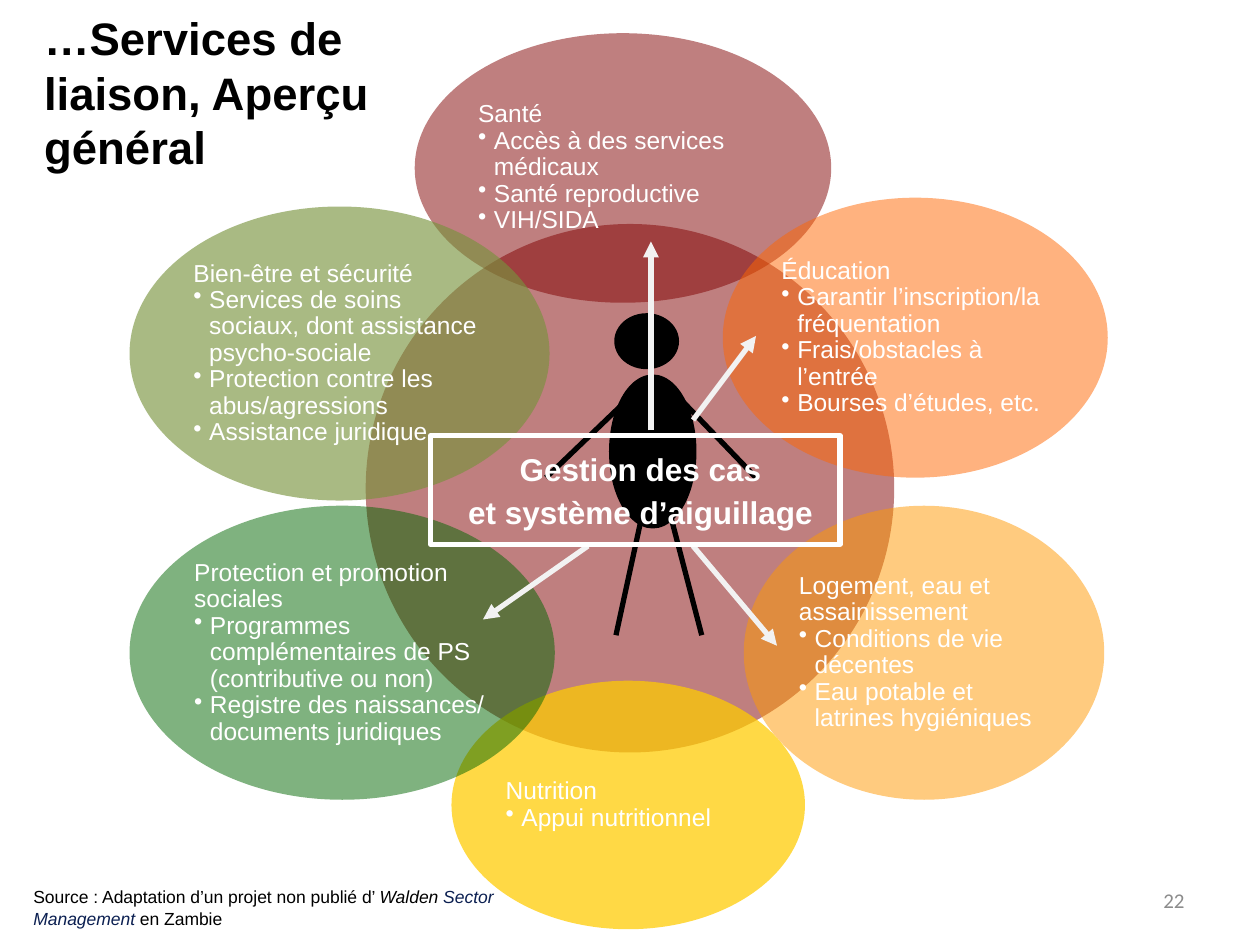
from lxml import etree
from pptx import Presentation
from pptx.dml.color import RGBColor
from pptx.enum.shapes import MSO_CONNECTOR, MSO_SHAPE
from pptx.enum.text import MSO_ANCHOR, MSO_AUTO_SIZE, PP_ALIGN
from pptx.oxml.ns import qn
from pptx.util import Pt

OVAL, RECT = MSO_SHAPE.OVAL, MSO_SHAPE.RECTANGLE
STRAIGHT = MSO_CONNECTOR.STRAIGHT
TOP, MIDDLE = MSO_ANCHOR.TOP, MSO_ANCHOR.MIDDLE
FIXED = MSO_AUTO_SIZE.NONE
LEFT, CENTER, RIGHT = PP_ALIGN.LEFT, PP_ALIGN.CENTER, PP_ALIGN.RIGHT

INSET = (1 - 0.5 ** 0.5) / 2  # margin of the rectangle inscribed in an oval
HANG = 9  # bullet indent

# box, colour, opacity in percent, heading, bullets
PETALS = [
    ((237, 19, 238, 154), "800000", 50, "Santé",
     ["Accès à des services médicaux", "Santé reproductive", "VIH/SIDA"]),
    ((413, 113, 220, 160), "FF6600", 50, "Éducation",
     ["Garantir l’inscription/la fréquentation", "Frais/obstacles à l’entrée",
      "Bourses d’études, etc."]),
    ((425, 289, 206, 168), "FF9900", 50, "Logement, eau et assainissement",
     ["Conditions de vie décentes", "Eau potable et latrines hygiéniques"]),
    ((258, 389, 202, 142), "FFCC00", 73, "Nutrition", ["Appui nutritionnel"]),
    ((74, 289, 243, 168), "006600", 50, "Protection et promotion sociales",
     ["Programmes complémentaires de PS (contributive ou non)",
      "Registre des naissances/ documents juridiques"]),
    ((74, 118, 240, 168), "77933C", 63, "Bien-être et sécurité",
     ["Services de soins sociaux, dont assistance psycho-sociale",
      "Protection contre les abus/agressions", "Assistance juridique"]),
]
LIMBS = [((50, 45), (0, 93)), ((120, 93), (71, 42)),
         ((55, 114), (40, 183)), ((71, 114), (89, 183))]
ARROWS = [((372, 246), (372, 138)), ((336, 312), (276, 354)),
          ((396, 240), (432, 192)), ((396, 312), (444, 369))]


def color(code):
    return RGBColor.from_string(code)


def points(*vals):
    return [Pt(round(val, 2)) for val in vals]


def apply(item, style):
    for name, val in style.items():
        setattr(item, name, val)


def add_run(para, text, code="000000", **style):
    run = para.add_run()
    run.text = text
    apply(run.font, {"name": "Arial", **style})
    run.font.color.rgb = color(code)


def add_text(slide, box, pad=None, **style):
    """Add a wrapping text box and return its frame."""
    frame = slide.shapes.add_textbox(*points(*box)).text_frame
    apply(frame, {"word_wrap": True, "auto_size": FIXED,
                  "vertical_anchor": TOP, **style})
    if pad is not None:
        apply(frame, {f"margin_{side}": Pt(pad)
                      for side in ("left", "top", "right", "bottom")})
    return frame


def add_form(slide, kind, box, fill=None, alpha=100, line=None, width=2):
    form = slide.shapes.add_shape(kind, *points(*box))
    form.shadow.inherit = False
    if fill:
        form.fill.solid()
        form.fill.fore_color.rgb = color(fill)
        if alpha < 100:
            tint = form.fill._xPr.find(".//" + qn("a:srgbClr"))
            etree.SubElement(tint, qn("a:alpha"), val=str(alpha * 1000))
    else:
        form.fill.background()
    if line:
        form.line.color.rgb = color(line)
        form.line.width = Pt(width)
    else:
        form.line.fill.background()


def add_line(slide, start, end, code, arrow=False):
    link = slide.shapes.add_connector(STRAIGHT, *points(*start, *end))
    link.line.color.rgb = color(code)
    link.line.width = Pt(3)
    if arrow:
        etree.SubElement(link.line._get_or_add_ln(), qn("a:tailEnd"),
                         type="triangle")
    etree.SubElement(link._element.spPr, qn("a:effectLst"))


def add_bullet(para):
    props = para._p.get_or_add_pPr()
    props.set("marL", str(Pt(HANG)))
    props.set("indent", str(-Pt(HANG)))
    etree.SubElement(props, qn("a:buChar"), char="•")


def add_petal(slide, box, fill, alpha, head, items):
    """Add a tinted oval with a heading and bullets in its inscribed box."""
    add_form(slide, OVAL, box, fill, alpha)
    left, top, wide, high = box
    inner = (left + wide * INSET, top + high * INSET,
             wide * (1 - 2 * INSET), high * (1 - 2 * INSET))
    frame = add_text(slide, inner, 1.4, vertical_anchor=MIDDLE)
    for num, text in enumerate([head, *items]):
        para = frame.add_paragraph() if num else frame.paragraphs[0]
        apply(para, {"alignment": LEFT, "line_spacing": 0.9})
        if num:
            para.level = 1
            add_bullet(para)
        add_run(para, text, "FFFFFF", size=Pt(14))


def add_person(slide, left, top):
    for x, y, wide, high in [(40, 0, 35, 30), (37, 35, 48, 86)]:
        add_form(slide, OVAL, (left + x, top + y, wide, high),
                 "000000", line="000000")
    for ends in LIMBS:
        start, end = [(left + x, top + y) for x, y in ends]
        add_line(slide, start, end, "000000")


def add_hub(slide, box):
    """Add the framed label at the centre."""
    add_form(slide, RECT, box, line="FFFFFF", width=3)
    left, top, wide, high = box
    frame = add_text(slide, (left + 14, top + 12, wide - 22, high - 14),
                     word_wrap=False)
    for num, text in enumerate(["Gestion des cas", "et système d’aiguillage"]):
        para = frame.add_paragraph() if num else frame.paragraphs[0]
        apply(para, {"alignment": CENTER, "line_spacing": 0.6,
                     "space_after": Pt(12)})
        add_run(para, text, "FFFFFF", size=Pt(18), bold=True)


def add_title(slide, box):
    title = slide.shapes.title
    apply(title, dict(zip(("left", "top", "width", "height"), points(*box))))
    frame = title.text_frame
    apply(frame, {"auto_size": FIXED, "word_wrap": True,
                  "vertical_anchor": MIDDLE})
    para = frame.paragraphs[0]
    para.alignment = LEFT
    add_run(para, "…Services de liaison, Aperçu général",
            size=Pt(26), bold=True)


def add_source(slide, box):
    para = add_text(slide, box).paragraphs[0]
    for text, code, slant in [
            ("Source : Adaptation d’un projet non publié d’ ", "000000", False),
            ("Walden ", "000000", True),
            ("Sector Management ", "0B1F51", True),
            ("en Zambie", "000000", False)]:
        add_run(para, text, code, size=Pt(10), italic=slant)


def add_number(slide, box):
    para = add_text(slide, box, vertical_anchor=MIDDLE).paragraphs[0]
    para.alignment = RIGHT
    add_run(para, "22", "8C8C8C", name="Calibri", size=Pt(12))


def main():
    deck = Presentation()
    deck.slide_width, deck.slide_height = points(720, 540)
    slide = deck.slides.add_slide(deck.slide_layouts[5])
    add_number(slide, (516, 500, 168, 29))
    add_form(slide, OVAL, (209, 128, 302, 302), "800000", 50)
    for petal in PETALS:
        add_petal(slide, *petal)
    add_person(slide, 312, 180)
    for start, end in ARROWS:
        add_line(slide, start, end, "F2F2F2", arrow=True)
    add_source(slide, (12, 503, 282, 32))
    add_hub(slide, (246, 249, 234, 62))
    add_title(slide, (18, 30, 276, 45))
    deck.save("out.pptx")


if __name__ == "__main__":
    main()
